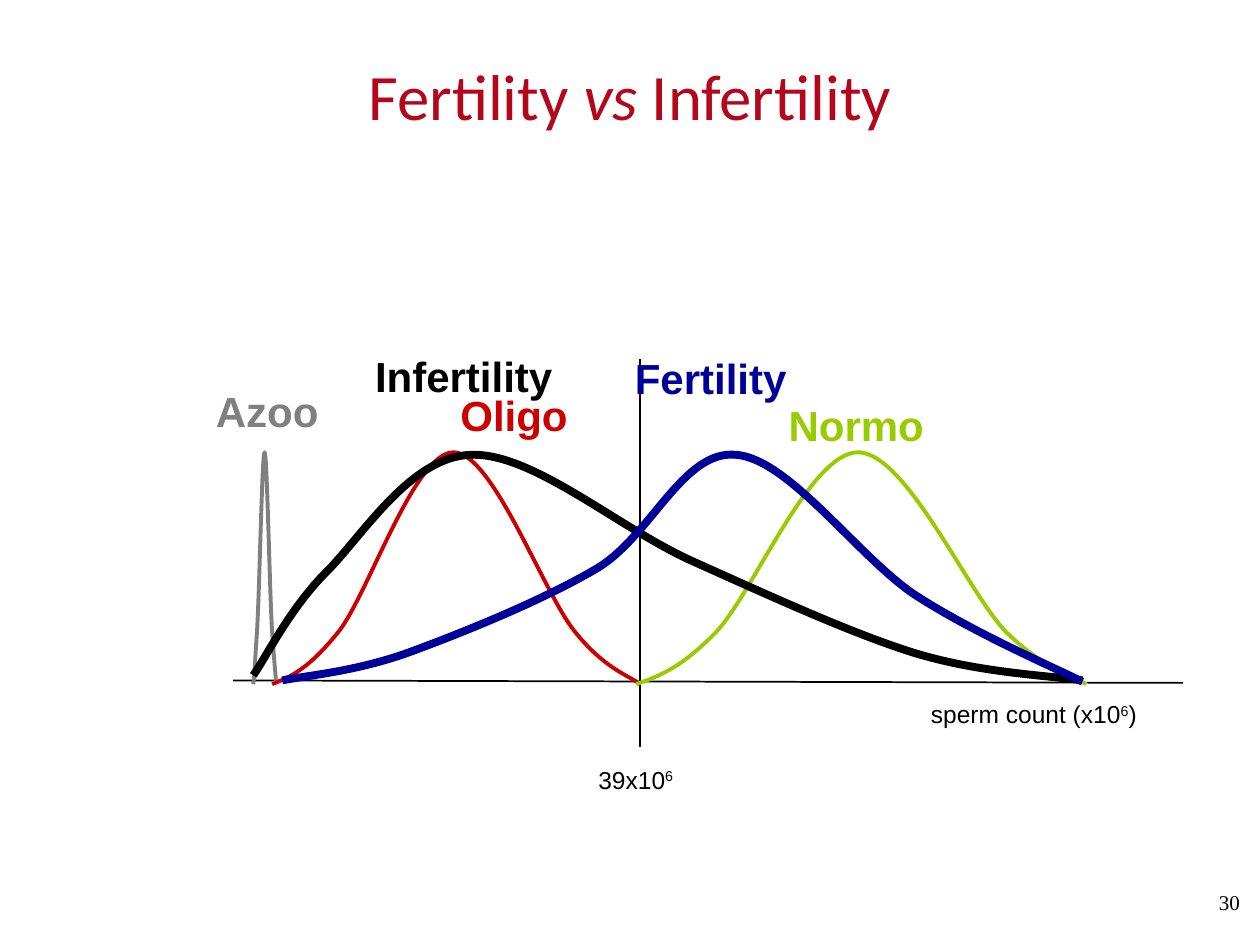
"""Build the slide comparing sperm count curves of fertile and infertile men."""
import pptx
import pptx.dml.color
import pptx.enum.shapes
import pptx.enum.text
import pptx.oxml.ns
import pptx.util
from lxml import etree
from pptx.util import Inches

ALIGN = pptx.enum.text.PP_ALIGN
FIT = pptx.enum.text.MSO_AUTO_SIZE
qn = pptx.oxml.ns.qn

CURVES = [
    ("808080", 2.25, [
        (2.01, 5.43), (2.02, 5.37), (2.02, 5.31), (2.04, 5.01),
        (2.06, 4.7), (2.08, 3.59), (2.1, 3.59),
        (2.12, 3.59), (2.14, 4.7), (2.16, 5.01),
        (2.18, 5.31), (2.19, 5.36), (2.19, 5.43)]),
    ("CC0000", 2.25, [
        (2.16, 5.43), (2.31, 5.37), (2.45, 5.31), (2.69, 5.01),
        (2.93, 4.7), (3.29, 3.59), (3.6, 3.59),
        (3.91, 3.59), (4.31, 4.7), (4.56, 5.01),
        (4.8, 5.31), (4.99, 5.36), (5.08, 5.43)]),
    ("99CC00", 2.25, [
        (5.05, 5.43), (5.22, 5.37), (5.4, 5.31), (5.69, 5.01),
        (5.98, 4.7), (6.43, 3.59), (6.81, 3.59),
        (7.19, 3.59), (7.68, 4.7), (7.98, 5.01),
        (8.28, 5.31), (8.52, 5.36), (8.62, 5.43)]),
    ("000000", 4.5, [
        (2.01, 5.36), (2.11, 5.22), (2.3, 4.83), (2.59, 4.54),
        (2.88, 4.25), (3.26, 3.62), (3.74, 3.61),
        (4.23, 3.59), (4.92, 4.2), (5.51, 4.46),
        (6.09, 4.72), (6.74, 5.02), (7.25, 5.18),
        (7.77, 5.34), (8.31, 5.36), (8.59, 5.4)]),
    ("000099", 4.5, [
        (8.59, 5.41), (8.37, 5.3), (7.72, 5.02), (7.26, 4.72),
        (6.81, 4.42), (6.26, 3.64), (5.84, 3.61),
        (5.42, 3.57), (5.17, 4.25), (4.74, 4.51),
        (4.3, 4.77), (3.65, 5.03), (3.24, 5.18),
        (2.82, 5.33), (2.45, 5.36), (2.24, 5.4)]),
]

CURVE_LABELS = [
    ("Azoo", 1.61, 3.01, 1.02, "808080"),
    ("Oligo", 3.55, 3.04, 1.06, "CC0000"),
    ("Normo", 6.15, 3.12, 1.29, "99CC00"),
    ("Infertility", 2.59, 2.73, 2.18, "000000"),
    ("Fertility", 4.93, 2.75, 1.42, "000099"),
]


def rgb(value):
    """Turn a hex string into a colour."""
    return pptx.dml.color.RGBColor.from_string(value)


def style_font(font, name, size, color, bold=False):
    """Set the typeface, size, colour and weight of a font."""
    font.name = name
    font.size = pptx.util.Pt(size)
    font.color.rgb = rgb(color)
    font.bold = bold


def style_line(line, color, width):
    """Set the colour and width of a line."""
    line.color.rgb = rgb(color)
    line.width = pptx.util.Pt(width)


def place(shape, left, top, width, height):
    """Move and size a shape in inches."""
    shape.left, shape.top = Inches(left), Inches(top)
    shape.width, shape.height = Inches(width), Inches(height)


def set_insets(frame, side, end):
    """Set the inner margins of a text frame in inches."""
    frame.margin_left = frame.margin_right = Inches(side)
    frame.margin_top = frame.margin_bottom = Inches(end)


def add_title(page):
    """Fill the title placeholder, with its middle word in italics."""
    title = page.shapes.title
    place(title, 0.5, 0.13, 9, 1.25)
    frame = title.text_frame
    frame.auto_size = FIT.NONE
    frame.vertical_anchor = pptx.enum.text.MSO_ANCHOR.MIDDLE
    set_insets(frame, 0.08, 0.04)
    para = frame.paragraphs[0]
    para.alignment = ALIGN.CENTER
    for words in ("Fertility ", "vs", " Infertility"):
        span = para.add_run()
        span.text = words
        style_font(span.font, "Calibri", 37, "B3071B")
        span.font.italic = words == "vs"


def add_label(page, words, left, top, width, height, size, color="000000",
              bold=False, align=ALIGN.LEFT):
    """Add a one-line Arial label and return its paragraph."""
    box = page.shapes.add_textbox(*map(Inches, (left, top, width, height)))
    frame = box.text_frame
    frame.word_wrap = False
    frame.auto_size = FIT.SHAPE_TO_FIT_TEXT
    frame.text = words
    para = frame.paragraphs[0]
    para.alignment = align
    style_font(para.runs[0].font, "Arial", size, color, bold)
    return para


def add_axis_label(page, left, top, width, before, after=""):
    """Add a label that ends in millions, written as a power of ten."""
    para = add_label(page, before, left, top, width, 0.34, 14)
    for words, baseline in (("6", "30000"), (after, "0")):
        if words:
            span = para.add_run()
            span.text = words
            style_font(span.font, "Arial", 14, "000000")
            span.font._element.set("baseline", baseline)


def add_axis(page, *ends):
    """Add a thin straight line between two points."""
    kind = pptx.enum.shapes.MSO_CONNECTOR.STRAIGHT
    axis = page.shapes.add_connector(kind, *map(Inches, ends))
    style_line(axis.line, "000000", 1)
    etree.SubElement(axis.element.spPr, qn("a:effectLst"))


def add_curve(page, color, width, points):
    """Add an open Bezier curve from a start and triples of points."""
    start, *rest = [(Inches(x), Inches(y)) for x, y in points]
    builder = page.shapes.build_freeform(*start)
    builder.add_line_segments(rest, close=False)
    curve = builder.convert_to_shape()
    curve.shadow.inherit = False
    curve.fill.background()
    style_line(curve.line, color, width)
    outline = next(curve.element.iter(qn("a:path")))
    segments = outline.findall(qn("a:lnTo"))
    for first in range(0, len(segments), 3):
        bend = etree.SubElement(outline, qn("a:cubicBezTo"))
        for segment in segments[first:first + 3]:
            bend.append(segment[0])
            outline.remove(segment)


def add_page_number(page, number):
    """Add the page number at the lower right."""
    box = page.shapes.add_textbox(*map(Inches, (7.59, 7.02, 2.33, 0.33)))
    frame = box.text_frame
    frame.word_wrap = True
    set_insets(frame, 0.08, 0.04)
    frame.text = number
    para = frame.paragraphs[0]
    para.alignment = ALIGN.RIGHT
    style_font(para.runs[0].font, "Times New Roman", 12, "000000")


def main():
    """Build and save the deck."""
    deck = pptx.Presentation()
    deck.slide_width, deck.slide_height = Inches(10), Inches(7.5)
    page = deck.slides.add_slide(deck.slide_layouts.get_by_name("Title Only"))
    add_title(page)
    add_axis(page, 1.85, 5.4, 9.39, 5.42)
    add_axis(page, 5.08, 5.93, 5.08, 2.85)
    add_axis_label(page, 7.29, 5.5, 1.86, "sperm count (x10", ")")
    add_axis_label(page, 4.65, 6.02, 0.81, "39x10")
    for color, width, points in CURVES:
        add_curve(page, color, width, points)
    for words, left, top, width, color in CURVE_LABELS:
        add_label(page, words, left, top, width, 0.51, 24, color, True,
                  ALIGN.CENTER)
    add_page_number(page, "30")
    deck.save("out.pptx")


if __name__ == "__main__":
    main()
